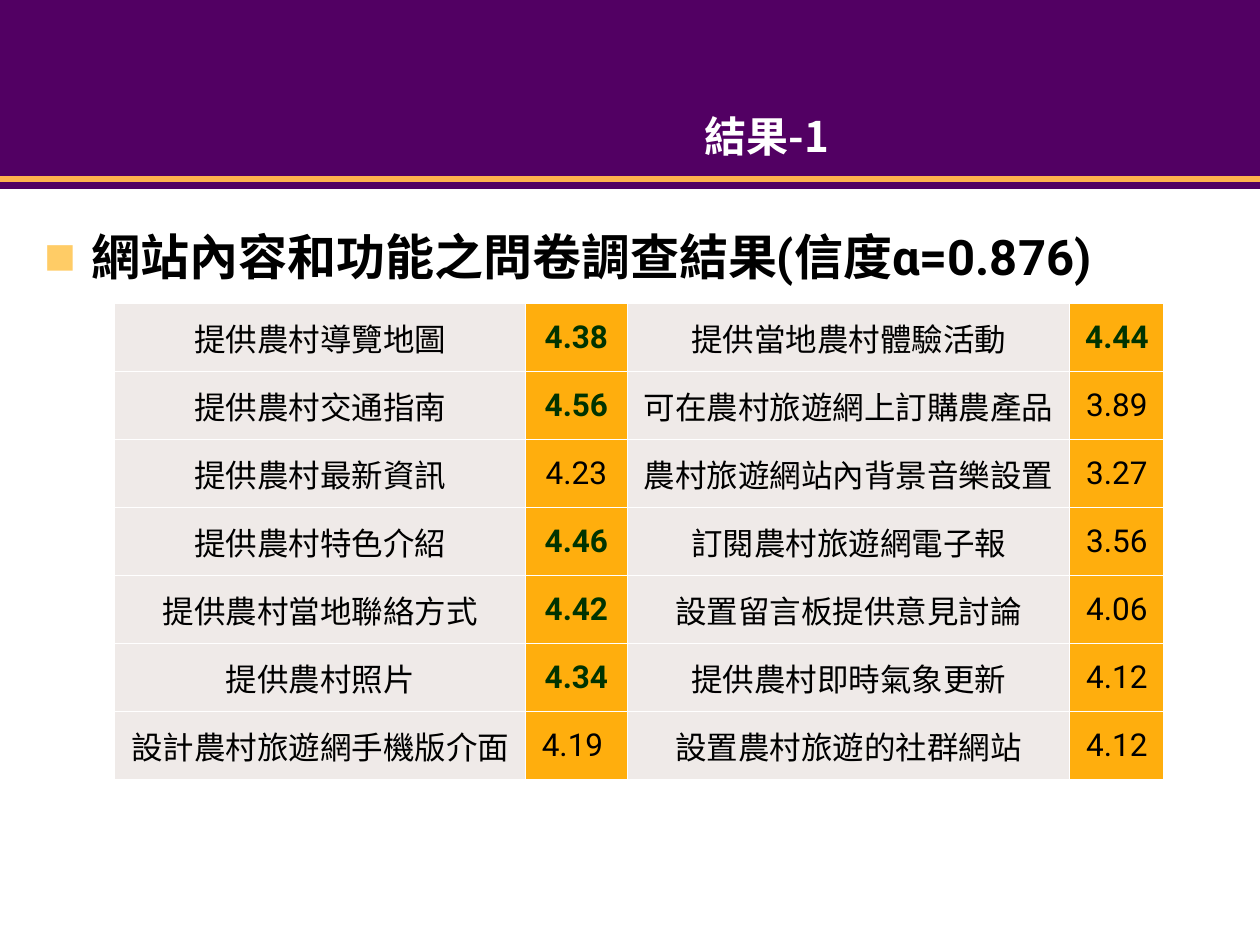
"""Build the slide with the survey scores for site content and functions."""
import pptx
import pptx.util
import pptx.dml.color
import pptx.enum.shapes
import pptx.enum.text
import pptx.oxml
import pptx.oxml.ns
import lxml.etree

Inches = pptx.util.Inches
Pt = pptx.util.Pt
NS = pptx.oxml.ns.nsdecls("a")
MID = pptx.enum.text.MSO_ANCHOR.MIDDLE
TOP = pptx.enum.text.MSO_ANCHOR.TOP
PURPLE, GOLD = "520063", "FFAE0D"


def color(code):
    return pptx.dml.color.RGBColor.from_string(code)


def write(frame, text, size=18, font="Roboto", ink="000000", bold=False, align="CENTER", anchor=MID):
    frame.vertical_anchor = anchor
    para = frame.paragraphs[0]
    para.alignment = getattr(pptx.enum.text.PP_ALIGN, align)
    run = para.add_run()
    run.text = text
    run.font.size = Pt(size)
    run.font.name = font
    run.font.bold = bold
    run.font.color.rgb = color(ink)
    return para


deck = pptx.Presentation()
deck.slide_width, deck.slide_height = Inches(10), Inches(7.5)
slide = deck.slides.add_slide(deck.slide_layouts[1])
shapes = slide.shapes
title, body = slide.placeholders

for top, height in [(0, 1.42), (1.42, 0.08)]:
    band = shapes.add_shape(pptx.enum.shapes.MSO_SHAPE.RECTANGLE, 0, Inches(top), Inches(10), Inches(height))
    band.shadow.inherit = False
    band.fill.solid()
    band.fill.fore_color.rgb = color(PURPLE)
    band.line.fill.background()

rule = shapes.add_connector(pptx.enum.shapes.MSO_CONNECTOR.STRAIGHT, 0, Inches(1.42), Inches(10), Inches(1.42))
rule.line.color.rgb = color("FFB24D")
rule.line.width = Pt(3)
lxml.etree.SubElement(rule._element.spPr, pptx.oxml.ns.qn("a:effectLst"))

for holder, box in [(title, (2.42, 0.83, 7.33, 0.67)), (body, (0.25, 1.75, 9.5, 0.66))]:
    holder.left, holder.top, holder.width, holder.height = map(Inches, box)
    holder.text_frame.auto_size = pptx.enum.text.MSO_AUTO_SIZE.NONE
    shapes._spTree.append(holder._element)

write(title.text_frame, "結果-1", size=24, font="Noto Sans CJK SC", ink="FFFFFF", bold=True, anchor=TOP)
para = write(body.text_frame, "網站內容和功能之問卷調查結果(信度α=0.876)", size=28, bold=True, align="LEFT", anchor=TOP)
props = para._p.get_or_add_pPr()
props.set("marL", str(Inches(0.38)))
props.set("indent", str(Inches(-0.38)))
for mark in [
    f'<a:buClr {NS}><a:srgbClr val="FFCC66"/></a:buClr>',
    f'<a:buSzPct {NS} val="65000"/>',
    f'<a:buFont {NS} typeface="Noto Sans CJK SC"/>',
    f'<a:buChar {NS} char="■"/>',
]:
    props.append(pptx.oxml.parse_xml(mark))

rows = [
    ("提供農村導覽地圖", "4.38", "提供當地農村體驗活動", "4.44"),
    ("提供農村交通指南", "4.56", "可在農村旅遊網上訂購農產品", "3.89"),
    ("提供農村最新資訊", "4.23", "農村旅遊網站內背景音樂設置", "3.27"),
    ("提供農村特色介紹", "4.46", "訂閱農村旅遊網電子報", "3.56"),
    ("提供農村當地聯絡方式", "4.42", "設置留言板提供意見討論", "4.06"),
    ("提供農村照片", "4.34", "提供農村即時氣象更新", "4.12"),
    ("設計農村旅遊網手機版介面", "4.19 ", "設置農村旅遊的社群網站", "4.12"),
]
table = shapes.add_table(7, 4, Inches(0.91), Inches(2.41), Inches(8.33), Inches(3.78)).table
table.first_row = table.horz_banding = False
for col, width in zip(table.columns, [3.26, 0.81, 3.51, 0.75]):
    col.width = Inches(width)
for y, row in enumerate(rows):
    table.rows[y].height = Inches(0.54)
    for x, text in enumerate(row):
        cell = table.cell(y, x)
        score = x % 2 == 1
        high = score and float(text) > 4.3
        write(cell.text_frame, text, ink="003300" if high else "000000", bold=high)
        cell.vertical_anchor = MID
        for side in ("lnL", "lnR", "lnT", "lnB"):
            cell._tc.get_or_add_tcPr().append(pptx.oxml.parse_xml(
                f'<a:{side} {NS} w="12700"><a:solidFill><a:srgbClr val="FFFFFF"/></a:solidFill></a:{side}>'))
        cell.fill.solid()
        cell.fill.fore_color.rgb = color(GOLD if score else "EFEAE8")

deck.save("out.pptx")
